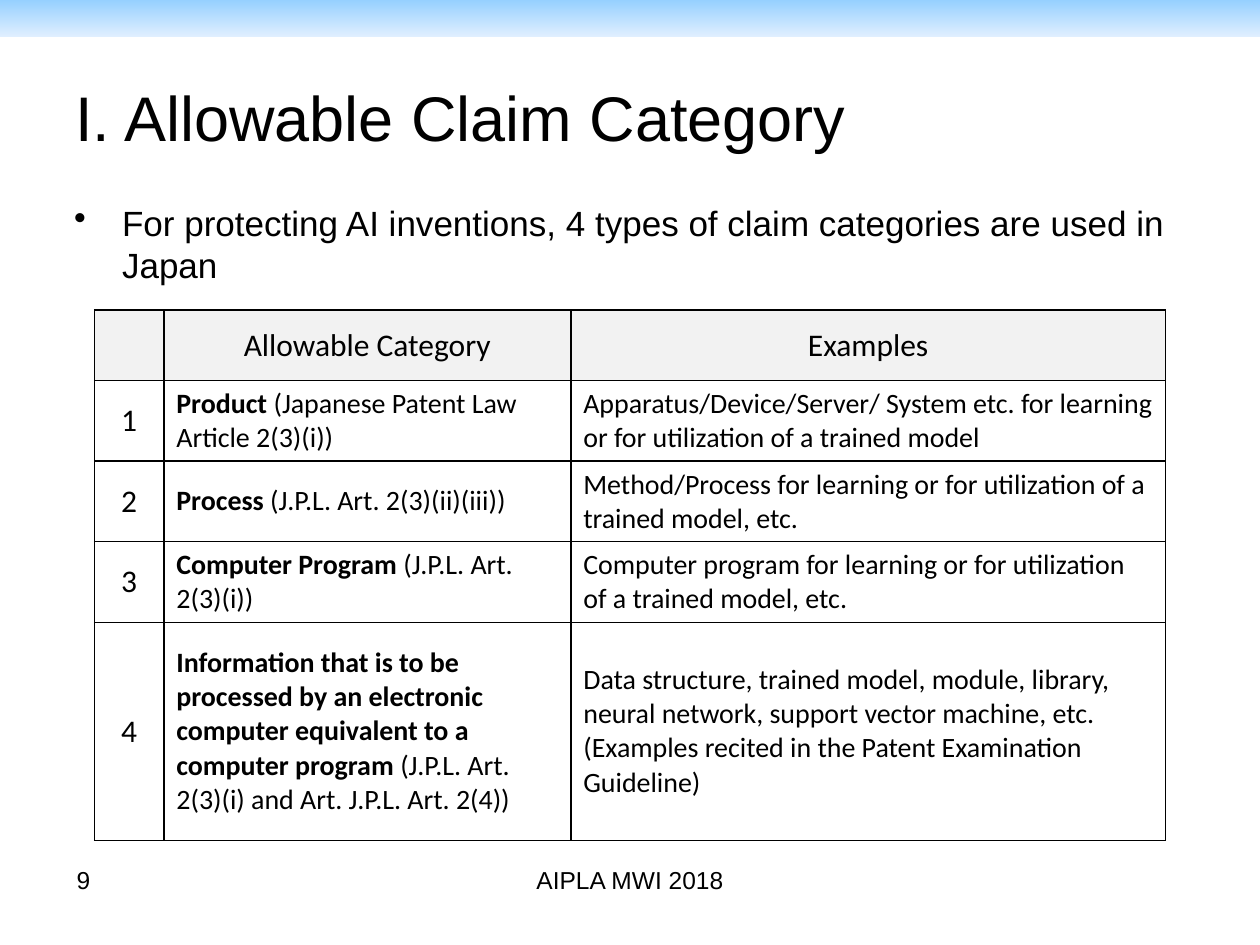
import pptx
import pptx.dml.color
import pptx.enum.dml
import pptx.enum.shapes
import pptx.enum.text
import pptx.oxml
import pptx.oxml.ns
import pptx.util

Inches = pptx.util.Inches
Pt = pptx.util.Pt
RGBColor = pptx.dml.color.RGBColor
PP_ALIGN = pptx.enum.text.PP_ALIGN
MIDDLE = pptx.enum.text.MSO_ANCHOR.MIDDLE

BLACK = RGBColor(0x00, 0x00, 0x00)
WHITE = RGBColor(0xFF, 0xFF, 0xFF)
HEADER_GREY = RGBColor(0xF2, 0xF2, 0xF2)
BAND_BLUE = RGBColor(0x96, 0xD0, 0xFF)
BAND_PALE = RGBColor(0xE0, 0xEF, 0xFF)
NAMESPACE = pptx.oxml.ns.nsdecls("a")


def style(para, font_name, size, align=PP_ALIGN.LEFT):
    para.alignment = align
    para.font.name = font_name
    para.font.size = Pt(size)
    para.font.color.rgb = BLACK


def add_text(slide, text, left, top, width, height, size, align=PP_ALIGN.LEFT):
    box = slide.shapes.add_textbox(Inches(left), Inches(top), Inches(width), Inches(height))
    box.text_frame.word_wrap = True
    box.text_frame.text = text
    style(box.text_frame.paragraphs[0], "Arial", size, align)
    return box


deck = pptx.Presentation()
deck.slide_width = Inches(10)
deck.slide_height = Inches(7.5)
slide = deck.slides.add_slide(deck.slide_layouts[6])

# Top band
band = slide.shapes.add_shape(
    pptx.enum.shapes.MSO_SHAPE.RECTANGLE, 0, 0, Inches(10), Inches(0.29))
band.shadow.inherit = False
band.line.fill.background()
band.fill.gradient()
band.fill.gradient_angle = 270
for stop, color in zip(band.fill.gradient_stops, (BAND_BLUE, BAND_PALE)):
    stop.color.rgb = color
band.fill.gradient_stops[0].position = 0
band.fill.gradient_stops[1].position = 1

# Footer, title and lead bullet
add_text(slide, "AIPLA MWI 2018", 3.86, 6.82, 2.28, 0.34, 14, PP_ALIGN.CENTER)
add_text(slide, "9", 0.51, 6.82, 2.28, 0.34, 14)
title = add_text(slide, "I. Allowable Claim Category", 0.5, 0.3, 9, 1.25, 36)
title.text_frame.vertical_anchor = MIDDLE

lead = slide.shapes.add_textbox(Inches(0.49), Inches(1.55), Inches(8.98), Inches(0.85))
lead.text_frame.word_wrap = True
lead_para = lead.text_frame.paragraphs[0]
lead_para.text = "For protecting AI inventions, 4 types of claim categories are used in Japan"
properties = lead_para._p.get_or_add_pPr()
properties.set("marL", str(Inches(0.38)))
properties.set("indent", str(-Inches(0.38)))
properties.append(pptx.oxml.parse_xml(f'<a:buChar {NAMESPACE} char="•"/>'))
style(lead_para, "Arial", 20)

# Claim category table
HEADERS = ["", "Allowable Category", "Examples"]
CATEGORIES = [
    ("Product", " (Japanese Patent Law Article 2(3)(i))",
     "Apparatus/Device/Server/ System etc. for learning or for utilization of a trained model"),
    ("Process", " (J.P.L. Art. 2(3)(ii)(iii))",
     "Method/Process for learning or for utilization of a trained model, etc."),
    ("Computer Program", " (J.P.L. Art. 2(3)(i))",
     "Computer program for learning or for utilization of a trained model, etc."),
    ("Information that is to be processed by an electronic computer equivalent to a "
     "computer program", " (J.P.L. Art. 2(3)(i) and Art. J.P.L. Art. 2(4))",
     "Data structure, trained model, module, library, neural network, support vector "
     "machine, etc. (Examples recited in the Patent Examination Guideline)"),
]
COLUMN_WIDTHS = [0.55, 3.23, 4.72]
ROW_HEIGHTS = [0.56, 0.64, 0.64, 0.64, 1.73]

table = slide.shapes.add_table(
    len(ROW_HEIGHTS), len(COLUMN_WIDTHS), Inches(0.75), Inches(2.46),
    Inches(sum(COLUMN_WIDTHS)), Inches(sum(ROW_HEIGHTS))).table
for column, width in zip(table.columns, COLUMN_WIDTHS):
    column.width = Inches(width)
for row, height in zip(table.rows, ROW_HEIGHTS):
    row.height = Inches(height)

for column_index, header in enumerate(HEADERS):
    table.cell(0, column_index).text = header
for number, (category, article, examples) in enumerate(CATEGORIES, start=1):
    table.cell(number, 0).text = str(number)
    category_para = table.cell(number, 1).text_frame.paragraphs[0]
    for text, bold in ((category, True), (article, False)):
        span = category_para.add_run()
        span.text = text
        span.font.bold = bold
    table.cell(number, 2).text = examples

for row_index, row in enumerate(table.rows):
    for column_index, cell in enumerate(row.cells):
        is_label = row_index == 0 or column_index == 0
        cell.vertical_anchor = MIDDLE
        para = cell.text_frame.paragraphs[0]
        style(para, "Calibri", 18 if is_label else 16,
              PP_ALIGN.CENTER if is_label else PP_ALIGN.LEFT)
        if is_label:
            para.font.bold = False
        cell_properties = cell._tc.get_or_add_tcPr()
        for side in ("lnL", "lnR", "lnT", "lnB"):
            cell_properties.append(pptx.oxml.parse_xml(
                f'<a:{side} {NAMESPACE} w="{Pt(1)}"><a:solidFill>'
                f'<a:srgbClr val="{BLACK}"/></a:solidFill></a:{side}>'))
        cell.fill.solid()
        cell.fill.fore_color.rgb = HEADER_GREY if row_index == 0 else WHITE

deck.save("out.pptx")
